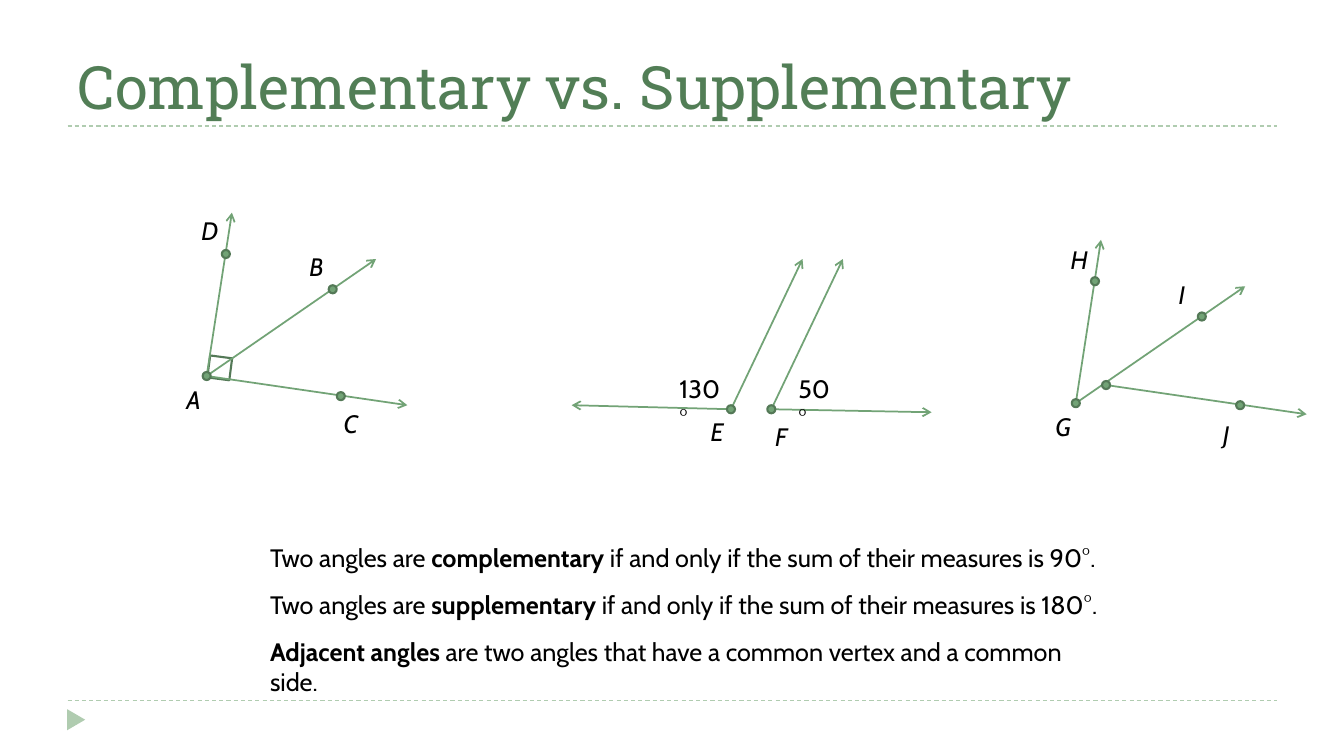
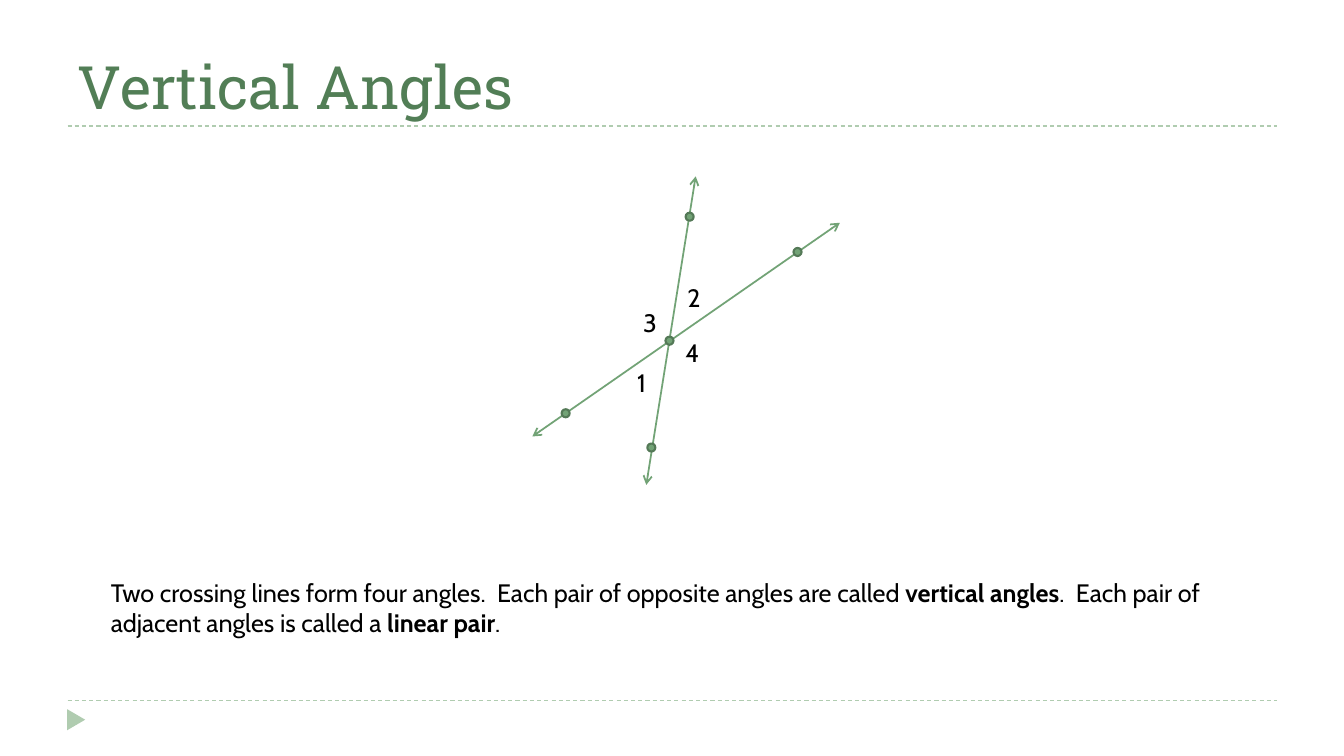
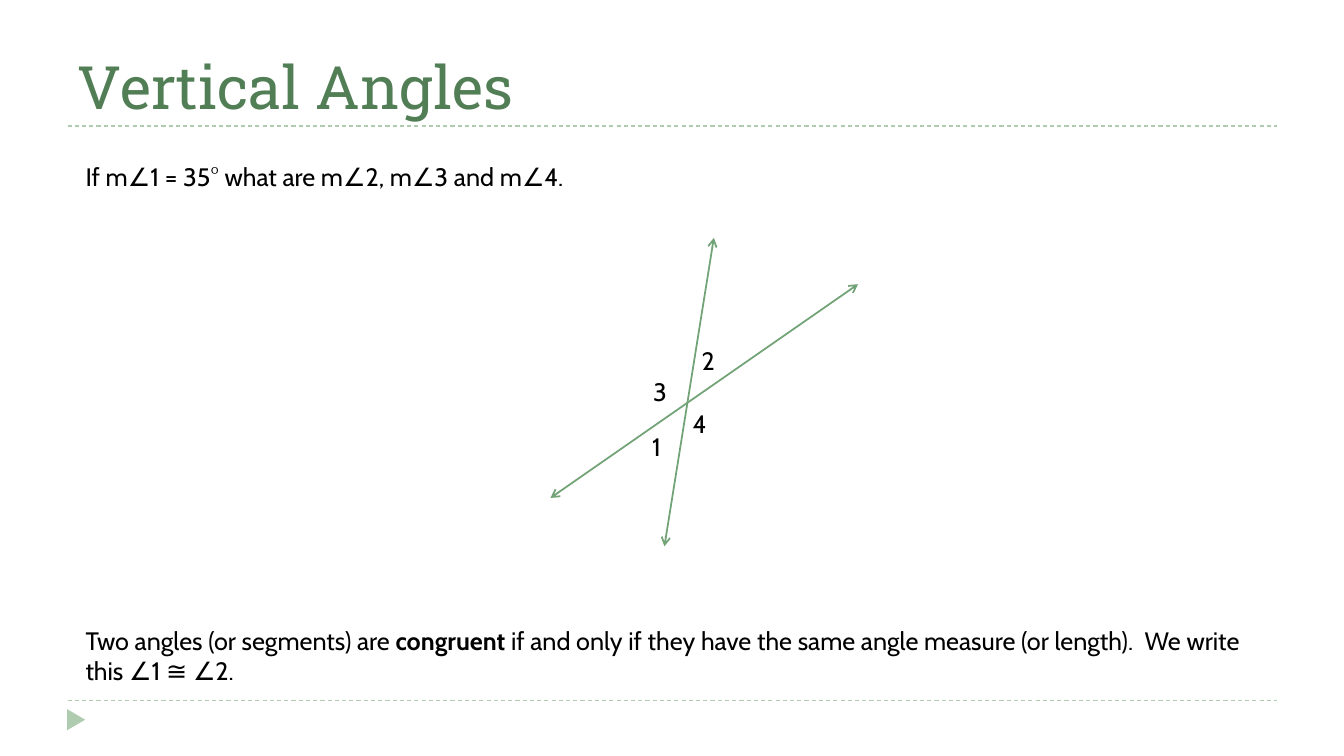
from dataclasses import dataclass

from pptx import Presentation
from pptx.dml.color import RGBColor
from pptx.enum import dml, shapes, text
from pptx.oxml import ns, xmlchemy
from pptx.util import Inches, Pt


@dataclass(frozen=True)
class Theme:
    title: RGBColor = RGBColor(0x52, 0x7E, 0x56)
    ink: RGBColor = RGBColor(0, 0, 0)
    paper: RGBColor = RGBColor(0xFF, 0xFF, 0xFF)
    ray: RGBColor = RGBColor(0x72, 0xA3, 0x76)
    outline: RGBColor = RGBColor(0x54, 0x79, 0x57)
    rule: RGBColor = RGBColor(0xB0, 0xCC, 0xB0)
    title_font: str = "Roboto Slab"
    body_font: str = "Cabin"
    title_size: float = 42.7
    body_size: float = 18
    rule_width: float = 0.75
    ray_width: float = 1.25
    outline_width: float = 1.5
    dot: float = 0.08


def shift(point, offset):
    return point[0] + offset[0], point[1] + offset[1]


class Deck:
    def __init__(self, theme):
        self.theme = theme
        self.prs = Presentation()
        self.prs.slide_width, self.prs.slide_height = Inches(13.33), Inches(7.5)
        self.slide = None

    def start(self, title):
        """Add a slide with the title, both dashed rules and the footer mark."""
        t = self.theme
        self.slide = self.prs.slides.add_slide(self.prs.slide_layouts[6])
        for y in (6.95, 1.25):
            rule = self.line((0.67, y), (12.67, y), t.rule, t.rule_width)
            rule.line.dash_style = dml.MSO_LINE.DASH
        self.shape(shapes.MSO_SHAPE.ISOSCELES_TRIANGLE, (0.65, 7.05, 0.21, 0.18),
                   t.rule, rotation=90)
        self.text(title, (0.67, 0.17, 12, 1.08), size=t.title_size, font=t.title_font,
                  color=t.title, anchor=text.MSO_ANCHOR.BOTTOM)

    def text(self, content, box, size=None, font=None, color=None, italic=False,
             anchor=text.MSO_ANCHOR.TOP, after=0):
        """Write one paragraph per line; words between asterisks are bold."""
        t = self.theme
        frame = self.slide.shapes.add_textbox(*map(Inches, box)).text_frame
        frame.word_wrap = True
        frame.vertical_anchor = anchor
        for i, line in enumerate(content.split("\n")):
            paragraph = frame.add_paragraph() if i else frame.paragraphs[0]
            paragraph.space_after = Pt(after)
            for j, part in enumerate(line.split("*")):
                if not part:
                    continue
                run = paragraph.add_run()
                run.text = part
                run.font.name = font or t.body_font
                run.font.size = Pt(size or t.body_size)
                run.font.color.rgb = color or t.ink
                run.font.bold = j % 2 == 1
                run.font.italic = italic

    def label(self, content, at, width=0.35, italic=False):
        self.text(content, (*at, width, 0.4), italic=italic)

    def shape(self, kind, box, fill, outline=None, rotation=0):
        item = self.slide.shapes.add_shape(kind, *map(Inches, box))
        item.shadow.inherit = False
        item.rotation = rotation
        item.fill.solid()
        item.fill.fore_color.rgb = fill
        if outline:
            item.line.color.rgb = outline
            item.line.width = Pt(self.theme.outline_width)
        else:
            item.line.fill.background()

    def dot(self, center):
        t = self.theme
        corner = shift(center, (-t.dot / 2, -t.dot / 2))
        self.shape(shapes.MSO_SHAPE.OVAL, (*corner, t.dot, t.dot), t.ray, t.outline)

    def line(self, start, end, color, width, arrows=()):
        item = self.slide.shapes.add_connector(
            shapes.MSO_CONNECTOR.STRAIGHT, *map(Inches, (*start, *end)))
        item.line.color.rgb = color
        item.line.width = Pt(width)
        for tag in arrows:
            arrow = xmlchemy.OxmlElement(tag)
            arrow.set("type", "arrow")
            item.line._get_or_add_ln().append(arrow)
        properties = item._element.find(ns.qn("p:spPr"))
        properties.append(xmlchemy.OxmlElement("a:effectLst"))
        return item

    def ray(self, vertex, reach, point=None):
        """Draw a ray to an offset, with an optional marked point on it."""
        t = self.theme
        self.line(vertex, shift(vertex, reach), t.ray, t.ray_width, ["a:tailEnd"])
        if point:
            self.dot(shift(vertex, point))

    def crossing(self, center, numbers):
        """Draw two lines through a point and number the angles."""
        t = self.theme
        for start, end in (((-1.36, 0.95), (1.69, -1.17)), ((-0.23, 1.43), (0.26, -1.63))):
            self.line(shift(center, start), shift(center, end), t.ray, t.ray_width,
                      ["a:headEnd", "a:tailEnd"])
        for number, at in numbers.items():
            self.label(number, at)


# Each ray is its reach and its marked point, both measured from the vertex.
STEEP = (0.25, -1.62), (0.19, -1.21)
SLANTED = (1.68, -1.16), (1.25, -0.86)
LOW = (1.99, 0.29), (1.33, 0.2)


def compare_pairs(deck):
    deck.start("Complementary vs. Supplementary")
    t = deck.theme
    deck.shape(shapes.MSO_SHAPE.RECTANGLE, (2.07, 3.54, 0.22, 0.22), t.paper, t.outline, 7.4)
    a, g, beside_g = (2.05, 3.73), (10.67, 4), (10.97, 3.82)
    e, f = (7.25, 4.06), (7.65, 4.06)
    for vertex, rays in ((a, (STEEP, SLANTED, LOW)), (g, (STEEP, SLANTED)),
                         (beside_g, (LOW,))):
        for reach, point in rays:
            deck.ray(vertex, reach, point)
    for vertex, side in ((e, (-1.58, -0.04)), (f, (1.59, 0.03))):
        deck.ray(vertex, side)
        deck.ray(vertex, (0.71, -1.49))
    for vertex in (a, e, f, g, beside_g):
        deck.dot(vertex)

    letters = {"A": (1.75, 3.76), "B": (2.97, 2.44), "C": (3.31, 4), "D": (1.9, 2.09),
               "E": (6.95, 4.08), "F": (7.59, 4.13), "G": (10.37, 4.03),
               "H": (10.52, 2.37), "I": (11.59, 2.72), "J": (12.03, 4.11)}
    for letter, at in letters.items():
        deck.label(letter, at, italic=True)
    deck.label("130°", (6.64, 3.65), width=0.68)
    deck.label("50°", (7.82, 3.65), width=0.56)
    deck.text("Two angles are *complementary* if and only if the sum of their measures is 90°.\n"
              "Two angles are *supplementary* if and only if the sum of their measures is 180°.\n"
              "*Adjacent angles* are two angles that have a common vertex and a common side.",
              (2.58, 5.33, 8.54, 1.35), after=12)


def define_vertical_angles(deck):
    deck.start("Vertical Angles")
    center = (6.64, 3.38)
    deck.crossing(center, {"1": (6.22, 3.59), "2": (6.72, 2.75),
                           "3": (6.28, 3), "4": (6.7, 3.3)})
    for offset in ((0, 0), (1.27, -0.88), (-1.03, 0.72), (0.2, -1.23), (-0.18, 1.06)):
        deck.dot(shift(center, offset))
    deck.text("Two crossing lines form four angles.  Each pair of opposite angles are called "
              "*vertical angles*.  Each pair of adjacent angles is called a *linear pair*.",
              (1, 5.68, 11.25, 0.71), after=12)


def ask_for_measures(deck):
    deck.start("Vertical Angles")
    deck.text("If m∠1 = 35° what are m∠2, m∠3 and m∠4.", (0.75, 1.55, 12.5, 0.4), after=12)
    deck.crossing((6.82, 3.99), {"1": (6.37, 4.23), "2": (6.86, 3.38),
                                 "3": (6.38, 3.68), "4": (6.77, 4)})
    deck.text("Two angles (or segments) are *congruent* if and only if they have the same "
              "angle measure (or length).  We write this ∠1 ≅ ∠2.",
              (0.75, 6.15, 12, 0.71), after=12)


def main():
    deck = Deck(Theme())
    compare_pairs(deck)
    define_vertical_angles(deck)
    ask_for_measures(deck)
    deck.prs.save("out.pptx")


if __name__ == "__main__":
    main()
